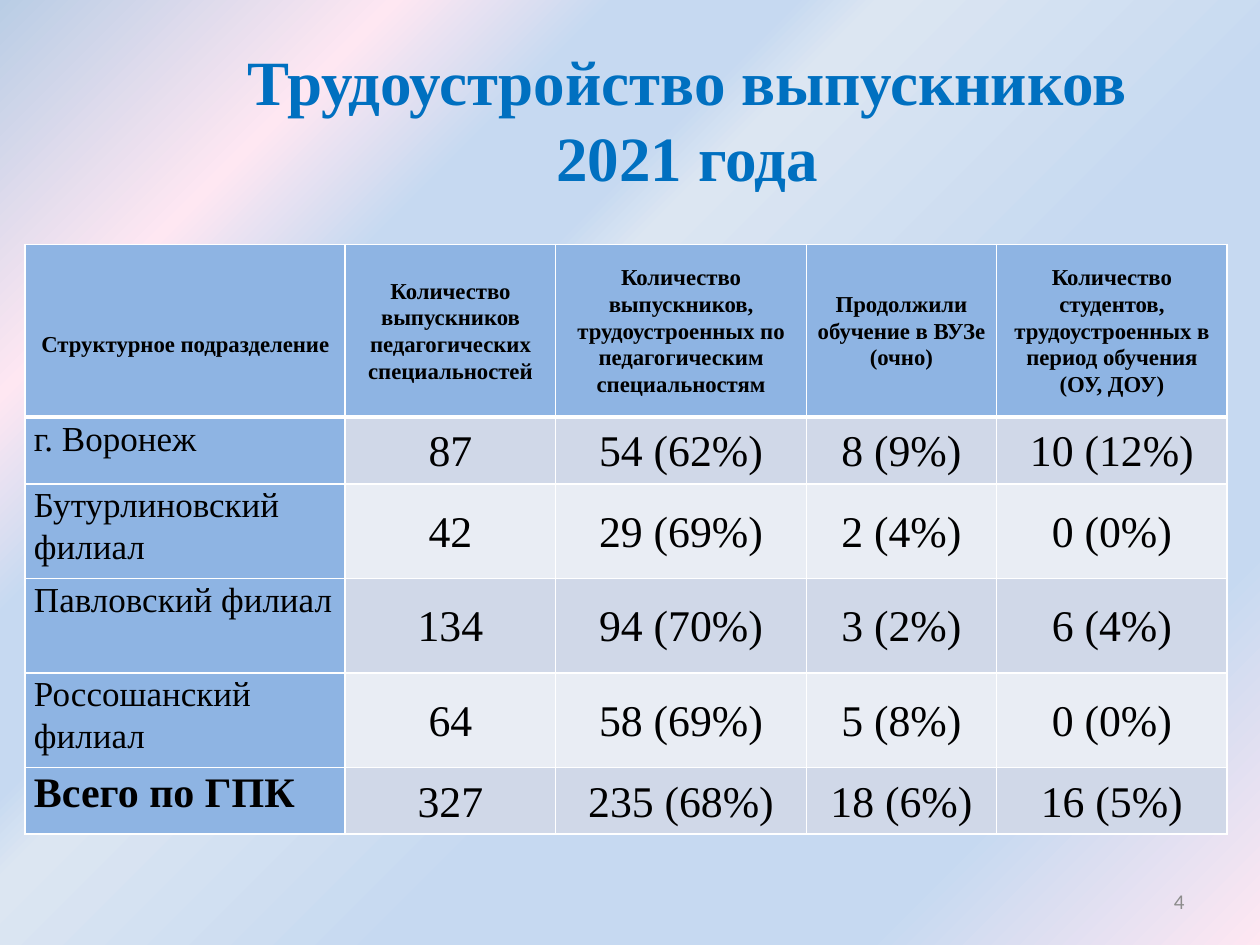
from dataclasses import dataclass

from lxml.etree import SubElement
from pptx import Presentation
from pptx.dml.color import RGBColor
from pptx.enum.text import MSO_ANCHOR as Anchor, PP_ALIGN as Align
from pptx.oxml.ns import qn
from pptx.util import Inches, Pt


@dataclass(frozen=True)
class Theme:
    """Colours, fonts and type sizes of the slide."""
    serif: str = "Times New Roman"
    sans: str = "Calibri"
    title: str = "0070C0"
    outline: str = "002060"
    text: str = "000000"
    muted: str = "8C8C8C"
    border: str = "FFFFFF"
    heading_fill: str = "8EB4E3"
    bands: tuple = ("D0D8E8", "E9EDF4")
    gradient: tuple = (
        (0, "B9CDE5"), (18, "FEE7F2"), (28, "C6D9F1"), (36, "C6D9F1"),
        (40, "DCE6F2"), (61, "C6D9F1"), (82, "C6D9F1"), (100, "FEE7F2"),
    )
    title_size: int = 36
    header_size: int = 13
    branch_size: int = 20
    total_size: int = 24
    value_size: int = 25
    number_size: int = 12


THEME = Theme()
COLUMNS = (2.54, 1.67, 1.99, 1.51, 1.83)
ROWS = (1.37, 0.53, 0.75, 0.75, 0.75, 0.53)
CONTENT = (
    ("Структурное подразделение",
     "Количество выпускников педагогических специальностей",
     "Количество выпускников, трудоустроенных по педагогическим специальностям",
     "Продолжили обучение в ВУЗе (очно)",
     "Количество студентов, трудоустроенных в период обучения (ОУ, ДОУ)"),
    ("г. Воронеж", "87", "54 (62%)", "8 (9%)", "10 (12%)"),
    ("Бутурлиновский филиал", "42", "29 (69%)", "2 (4%)", "0 (0%)"),
    ("Павловский филиал", "134", "94 (70%)", "3 (2%)", "6 (4%)"),
    ("Россошанский филиал", "64", "58 (69%)", "5 (8%)", "0 (0%)"),
    ("Всего по ГПК", "327", "235 (68%)", "18 (6%)", "16 (5%)"),
)


def add_solid(parent, color):
    """Append a solid fill to an XML element."""
    fill = SubElement(parent, qn("a:solidFill"))
    SubElement(fill, qn("a:srgbClr"), val=color)


def write(frame, text, *, size, color=THEME.text, font=THEME.serif, bold=False,
          align=Align.CENTER, spacing=None):
    """Write one formatted paragraph and return its run."""
    para = frame.paragraphs[0]
    para.alignment = align
    para.line_spacing = spacing
    span = para.add_run()
    span.text = text
    span.font.size = Pt(size)
    span.font.name = font
    span.font.bold = bold
    span.font.color.rgb = RGBColor.from_string(color)
    return span


def paint_background(page):
    """Fill the page with the diagonal gradient."""
    fill = page.background.fill
    fill.gradient()
    fill.gradient_angle = 315
    stops = page.element.find(".//" + qn("a:gsLst"))
    for stop in list(stops):
        stops.remove(stop)
    for position, color in THEME.gradient:
        stop = SubElement(stops, qn("a:gs"), pos=str(position * 1000))
        SubElement(stop, qn("a:srgbClr"), val=color)


def add_text(page, text, left, top, width, height, anchor=Anchor.TOP, **style):
    """Add a wrapping text box and return its run."""
    box = page.shapes.add_textbox(
        Inches(left), Inches(top), Inches(width), Inches(height))
    frame = box.text_frame
    frame.word_wrap = True
    frame.vertical_anchor = anchor
    return write(frame, text, **style)


def outline_text(span, color, width):
    """Draw a thin outline around the letters."""
    properties = span.font._element
    line = properties.makeelement(qn("a:ln"), {"w": str(Pt(width))})
    add_solid(line, color)
    properties.insert(0, line)


def border_cell(cell, bottom):
    """Set the four borders of a cell and keep its fill after them."""
    properties = cell._tc.get_or_add_tcPr()
    widths = {"L": 1, "R": 1, "T": 1, "B": bottom}
    for index, (side, width) in enumerate(widths.items()):
        line = properties.makeelement(qn(f"a:ln{side}"), {"w": str(Pt(width))})
        add_solid(line, THEME.border)
        properties.insert(index, line)


def cell_style(row, column):
    """Choose the text format for a place in the table."""
    if row == 0:
        return {"size": THEME.header_size, "bold": True}
    if column > 0:
        return {"size": THEME.value_size}
    total = row == len(ROWS) - 1
    size = THEME.total_size if total else THEME.branch_size
    return {"size": size, "bold": total, "align": Align.LEFT}


def fill_cell(cell, text, row, column):
    """Write and colour one table cell."""
    heading = row == 0 or column == 0
    color = THEME.heading_fill if heading else THEME.bands[(row - 1) % 2]
    cell.fill.solid()
    cell.fill.fore_color.rgb = RGBColor.from_string(color)
    cell.margin_left = cell.margin_right = Inches(0.07)
    cell.margin_top = Inches(0.21 if row == column == 0 else 0)
    cell.margin_bottom = 0
    cell.vertical_anchor = Anchor.TOP if row and column == 0 else Anchor.MIDDLE
    write(cell.text_frame, text, spacing=1.07, **cell_style(row, column))
    border_cell(cell, bottom=3 if row == 0 else 1)


def add_results(page):
    """Add the table of graduate employment."""
    table = page.shapes.add_table(
        len(ROWS), len(COLUMNS), Inches(0.2), Inches(1.94),
        Inches(sum(COLUMNS)), Inches(sum(ROWS))).table
    for column, width in zip(table.columns, COLUMNS):
        column.width = Inches(width)
    for row, height in zip(table.rows, ROWS):
        row.height = Inches(height)
    for row, texts in enumerate(CONTENT):
        for column, text in enumerate(texts):
            fill_cell(table.cell(row, column), text, row, column)


def main():
    """Build the slide and save it."""
    deck = Presentation()
    deck.slide_width, deck.slide_height = Inches(10), Inches(7.5)
    page = deck.slides.add_slide(deck.slide_layouts[6])
    paint_background(page)
    add_text(page, "4", 7.17, 6.95, 2.33, 0.4, anchor=Anchor.MIDDLE,
             size=THEME.number_size, color=THEME.muted, font=THEME.sans,
             align=Align.RIGHT)
    add_results(page)
    title = add_text(page, "Трудоустройство выпускников 2021 года",
                     1.54, 0.29, 7.83, 1.31, size=THEME.title_size,
                     color=THEME.title, bold=True)
    outline_text(title, THEME.outline, 1)
    deck.save("out.pptx")


if __name__ == "__main__":
    main()
